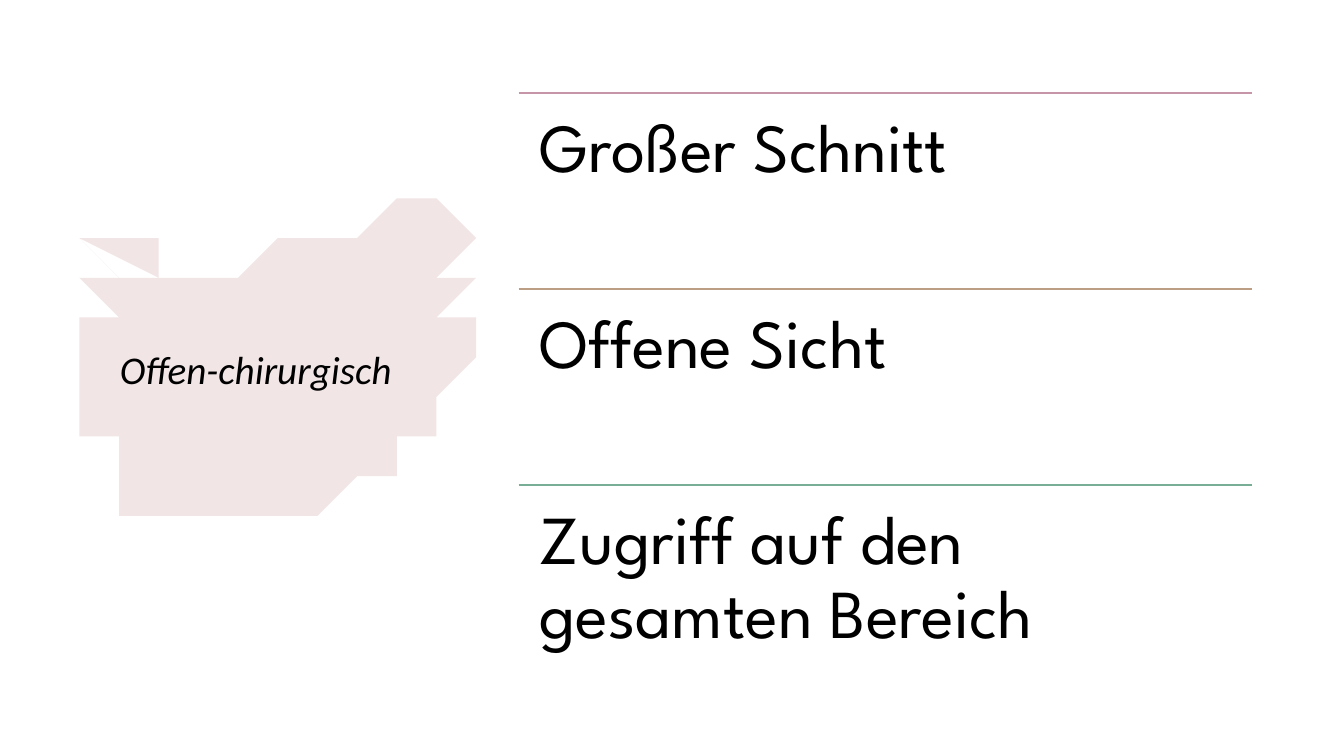
from lxml import etree
from pptx import Presentation
from pptx.dml.color import RGBColor as RGB
from pptx.enum.shapes import MSO_CONNECTOR as CONN
from pptx.enum.text import MSO_ANCHOR as ANCHOR, PP_ALIGN as ALIGN
from pptx.oxml.ns import qn
from pptx.util import Cm, Pt

COLORS = {"brush": "BA827F", "text": "000000", "rose": "C696A8",
          "sand": "BC9E84", "green": "77AE95"}

POINTS = [("Großer Schnitt", "rose"),
          ("Offene Sicht", "sand"),
          ("Zugriff auf den gesamten Bereich", "green")]
LIST_LEFT, LIST_TOP, LIST_WIDTH, ROW_HEIGHT = 13.07, 2.34, 18.47, 4.94

# Brush stroke: curves as (start, control, control, end), in cm
TOP_CURVE = [(3.96, 6.5), (5.1, 6.9), (8.2, 6.6), (10.9, 4.95)]
BOTTOM_CURVE = [(10.87, 10.8), (9.2, 12.6), (7.2, 13.3), (3.48, 12.73)]
RIGHT_EDGE = [(11.18, 5.16), (11.53, 6.1), (11.35, 6.96), (11.68, 7.32),
              (11.4, 7.8), (11.86, 8.03), (12.12, 8.64), (11.86, 9.27),
              (11.28, 10.06)]
LEFT_EDGE = [(2.59, 12.22), (3.35, 12.22), (2.62, 11.84), (2.51, 11.38),
             (1.96, 11.07), (2.46, 11.18), (1.6, 10.67), (2.06, 10.62),
             (1.63, 10.41), (2.26, 9.98), (2.31, 9.5), (1.96, 9.25),
             (2.51, 9.09), (1.73, 8.61), (1.83, 8.13), (2.84, 8.2),
             (1.85, 7.09), (2.62, 7.5), (1.8, 6.55), (3.68, 7.42),
             (2.26, 6.17), (3, 6.58), (2.18, 5.59)]


def curve(a, b, c, d, steps=10):
    points = []
    for i in range(steps + 1):
        t = i / steps
        u = 1 - t
        weights = (u ** 3, 3 * u * u * t, 3 * u * t * t, t ** 3)
        points.append(tuple(sum(w * v for w, v in zip(weights, axis))
                            for axis in zip(a, b, c, d)))
    return points


def add_brush(slide):
    outline = (curve(*TOP_CURVE) + RIGHT_EDGE + curve(*BOTTOM_CURVE)
               + LEFT_EDGE)
    fb = slide.shapes.build_freeform(*outline[0], scale=Cm(1))
    fb.add_line_segments(outline[1:], close=True)
    sp = fb.convert_to_shape()
    sp.shadow.inherit = False
    sp.line.fill.background()
    sp.fill.solid()
    sp.fill.fore_color.rgb = RGB.from_string(COLORS["brush"])
    color = sp._element.spPr.find(qn("a:solidFill"))[0]
    etree.SubElement(color, qn("a:alpha")).set("val", "20000")


def add_text(slide, text, box, margin, anchor, font):
    tf = slide.shapes.add_textbox(*[Cm(v) for v in box]).text_frame
    frame = {"word_wrap": True, "vertical_anchor": anchor}
    for side in ("left", "right", "top", "bottom"):
        frame[f"margin_{side}"] = Cm(margin)
    for name, value in frame.items():
        setattr(tf, name, value)
    p = tf.paragraphs[0]
    p.alignment = ALIGN.LEFT
    p.line_spacing = 0.9
    r = p.add_run()
    r.text = text
    for name, value in font.items():
        setattr(r.font, name, value)
    r.font.color.rgb = RGB.from_string(COLORS["text"])


def add_rule(slide, top, color):
    line = slide.shapes.add_connector(
        CONN.STRAIGHT, Cm(LIST_LEFT), Cm(top),
        Cm(LIST_LEFT + LIST_WIDTH), Cm(top))
    line.line.width = Pt(1)
    line.line.color.rgb = RGB.from_string(COLORS[color])
    etree.SubElement(line._element.spPr, qn("a:effectLst"))


def main():
    prs = Presentation()
    prs.slide_width, prs.slide_height = Cm(33.87), Cm(19.05)
    slide = prs.slides.add_slide(prs.slide_layouts[6])

    # Title on the brush stroke
    add_brush(slide)
    add_text(slide, "Offen-chirurgisch", (2.77, 7.29, 8.36, 4.17), 0.25,
             ANCHOR.MIDDLE,
             {"name": "Calibri", "size": Pt(28), "italic": True})

    # Ruled list
    for i, (text, color) in enumerate(POINTS):
        top = LIST_TOP + i * ROW_HEIGHT
        add_rule(slide, top, color)
        add_text(slide, text, (LIST_LEFT, top, LIST_WIDTH, ROW_HEIGHT), 0.52,
                 ANCHOR.TOP, {"name": "League Spartan", "size": Pt(49)})

    prs.save("out.pptx")


if __name__ == "__main__":
    main()
